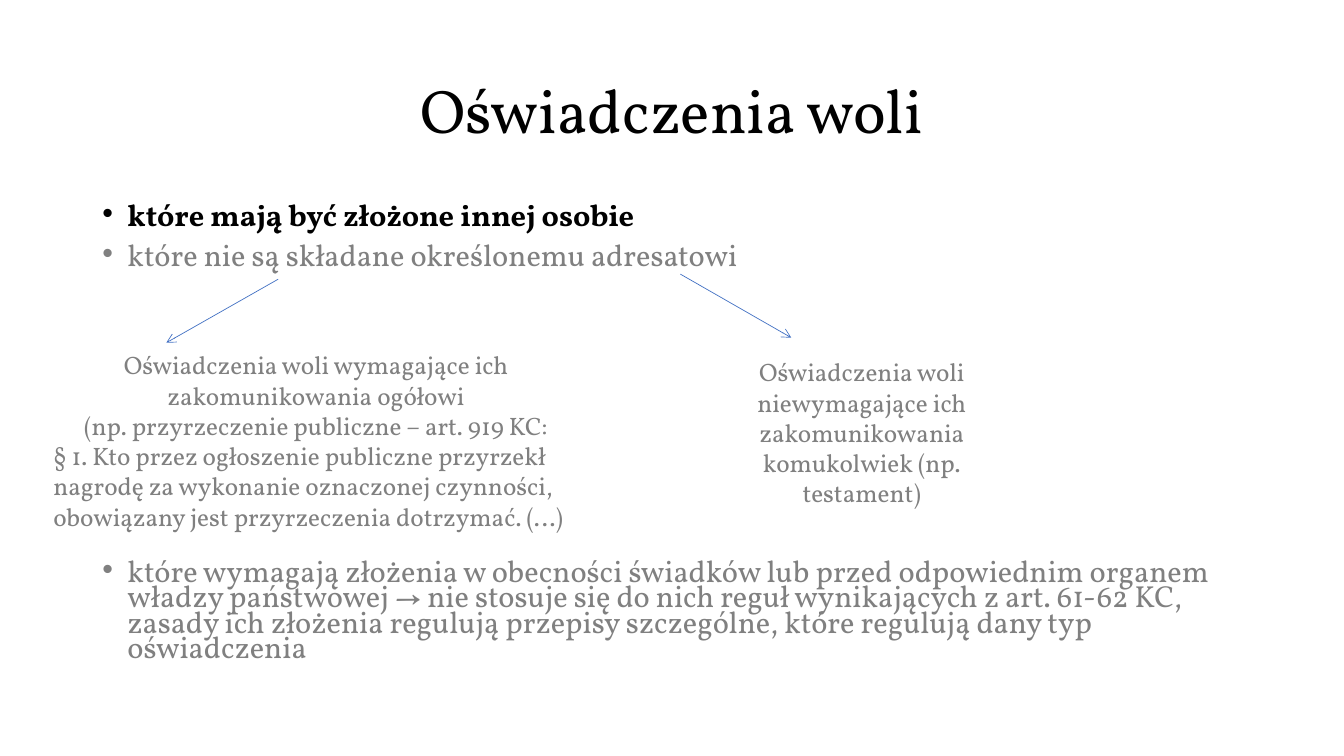
from lxml import etree
from pptx import Presentation
from pptx.dml.color import RGBColor
from pptx.enum.shapes import MSO_CONNECTOR
from pptx.enum.text import MSO_ANCHOR, PP_ALIGN
from pptx.oxml.ns import qn
from pptx.util import Pt

LEFT, CENTER = PP_ALIGN.LEFT, PP_ALIGN.CENTER
TOP, MIDDLE = MSO_ANCHOR.TOP, MSO_ANCHOR.MIDDLE
STRAIGHT = MSO_CONNECTOR.STRAIGHT

FONT = "Vollkorn"
BLACK, GRAY, BLUE = "000000", "808080", "4472C4"
BULLET_INDENT = 18

TITLE = "Oświadczenia woli"
BULLETS = [
    ("które mają być złożone innej osobie", BLACK, True, 10),
    ("które nie są składane określonemu adresatowi", GRAY, False, 10),
    ("które wymagają złożenia w obecności świadków lub przed odpowiednim organem "
     "władzy państwowej → nie stosuje się do nich reguł wynikających z art. 61-62 KC, "
     "zasady ich złożenia regulują przepisy szczególne, które regulują dany typ "
     "oświadczenia", GRAY, False, 207.5),
]
BRANCHES = [
    ((30.96, 246.24, 389.52, 138.24), [
        ("Oświadczenia woli wymagające ich zakomunikowania ogółowi", CENTER),
        ("(np. przyrzeczenie publiczne – art. 919 KC:", CENTER),
        ("§ 1. Kto przez ogłoszenie publiczne przyrzekł nagrodę za wykonanie oznaczonej "
         "czynności, obowiązany jest przyrzeczenia dotrzymać. (…)", LEFT),
    ]),
    ((509.76, 251.28, 211.68, 116.64), [
        ("Oświadczenia woli niewymagające ich zakomunikowania komukolwiek "
         "(np. testament)", CENTER),
    ]),
]
ARROWS = [(198.72, 199.44, 118.8, 244.8), (486, 195.84, 565.2, 241.2)]


def color(hex_value):
    return RGBColor.from_string(hex_value)


def add_box(page, area, anchor=TOP):
    frame = page.shapes.add_textbox(*map(Pt, area)).text_frame
    frame.word_wrap = True
    frame.vertical_anchor = anchor
    return frame


def add_para(frame, text, size, fill=GRAY, bold=False, align=LEFT, spacing=1.0, before=0):
    first = frame.paragraphs[0]
    para = frame.add_paragraph() if first.runs else first
    para.alignment = align
    para.line_spacing = spacing
    para.space_before = Pt(before)
    span = para.add_run()
    span.text = text
    span.font.name = FONT
    span.font.size = Pt(size)
    span.font.bold = bold
    span.font.color.rgb = color(fill)
    return para


def add_bullet(para):
    props = para._p.get_or_add_pPr()
    props.set("marL", str(Pt(BULLET_INDENT)))
    props.set("indent", str(-Pt(BULLET_INDENT)))
    etree.SubElement(props, qn("a:buFont"), typeface="Arial")
    etree.SubElement(props, qn("a:buChar"), char="•")


def add_arrow(page, ends):
    arrow = page.shapes.add_connector(STRAIGHT, *map(Pt, ends))
    arrow.line.color.rgb = color(BLUE)
    arrow.line.width = Pt(0.5)
    etree.SubElement(arrow.line._get_or_add_ln(), qn("a:tailEnd"), type="arrow")
    etree.SubElement(arrow._element.spPr, qn("a:effectLst"))


def main():
    deck = Presentation()
    deck.slide_width, deck.slide_height = Pt(960), Pt(540)
    page = deck.slides.add_slide(deck.slide_layouts[6])

    title = add_box(page, (66, 28.75, 828, 104.4), MIDDLE)
    add_para(title, TITLE, 44, BLACK, align=CENTER, spacing=0.9)

    body = add_box(page, (66, 143.75, 828, 342.6))
    for text, fill, bold, before in BULLETS:
        add_bullet(add_para(body, text, 21.7, fill, bold, spacing=0.7, before=before))

    for ends in ARROWS:
        add_arrow(page, ends)

    for area, lines in BRANCHES:
        box = add_box(page, area)
        for text, align in lines:
            add_para(box, text, 18, align=align)

    deck.save("out.pptx")


if __name__ == "__main__":
    main()
